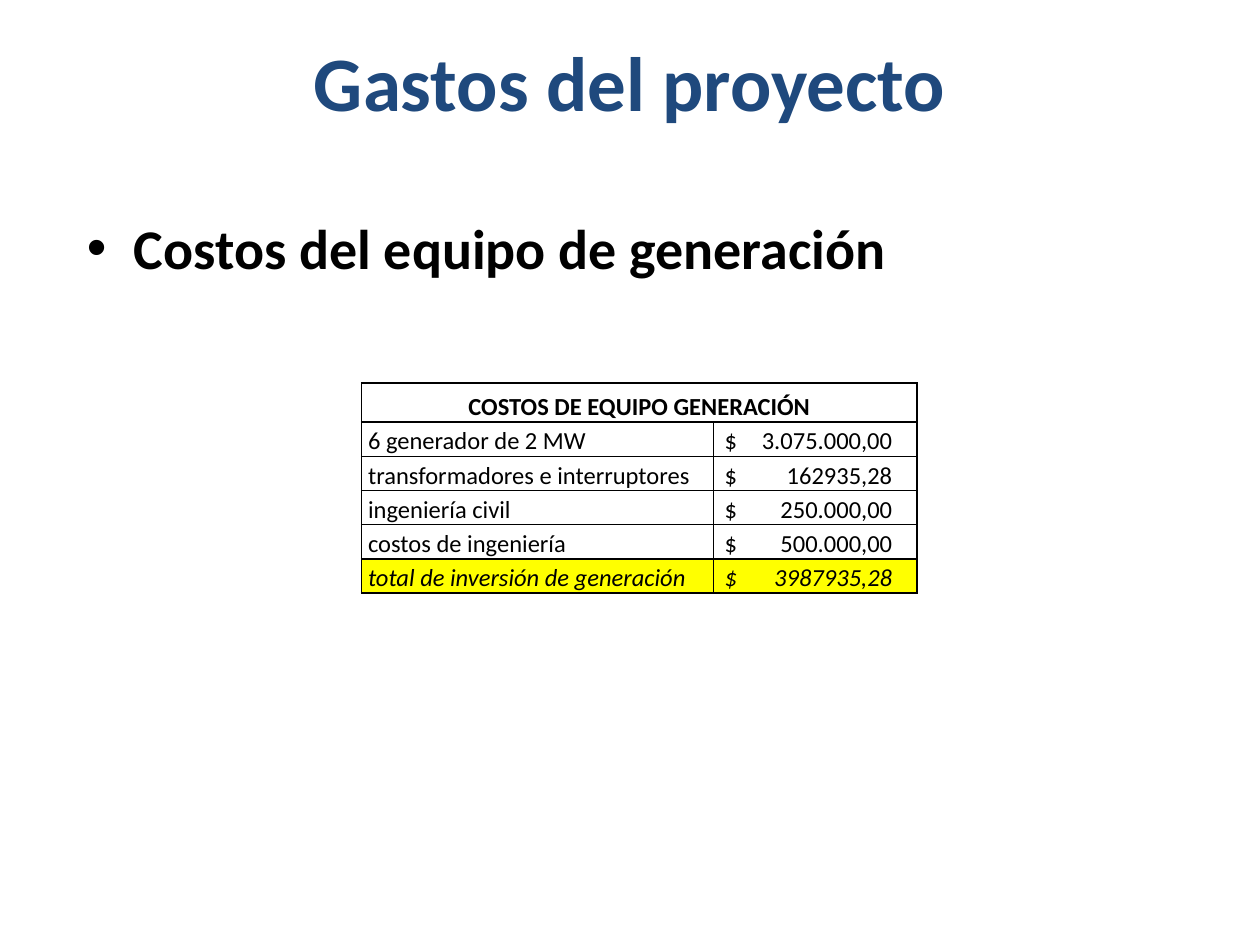
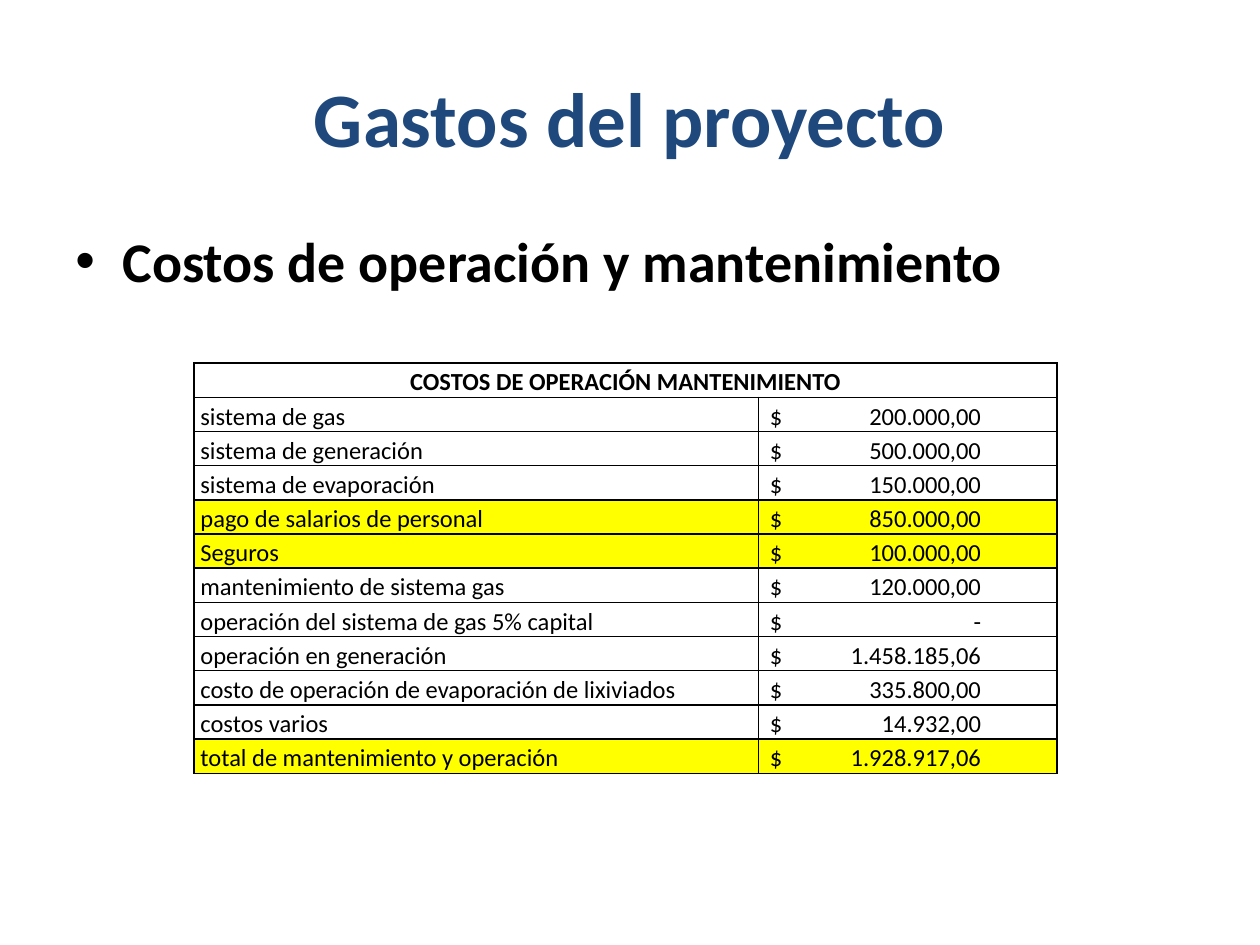
import pptx
import pptx.util
import pptx.dml.color
import pptx.enum.text
import pptx.oxml
import pptx.oxml.ns

Cm, Pt = pptx.util.Cm, pptx.util.Pt
ALIGN = pptx.enum.text.PP_ALIGN
ANCHOR = pptx.enum.text.MSO_ANCHOR

HUES = {"title": "1F497D", "text": "000000", "plain": "FFFFFF", "mark": "FFFF00"}
FONTS = {
    "title": {"name": "Calibri", "size": Pt(44), "bold": True},
    "topic": {"name": "Calibri", "size": Pt(32), "bold": True},
    "head": {"name": "Calibri", "size": Pt(14), "bold": True},
    "cell": {"name": "Calibri", "size": Pt(14), "bold": False},
    "total": {"name": "Calibri", "size": Pt(14), "bold": False, "italic": True},
}
CELL = {
    "margin_left": Cm(0.13), "margin_right": Cm(0.13),
    "margin_top": 0, "margin_bottom": 0,
    "vertical_anchor": ANCHOR.BOTTOM,
}
ROW = 0.69  # row height in cm

# Each cost: label, amount, and the look of its row
PLANT = [
    ("6 generador de 2 MW", "3.075.000,00", ""),
    ("transformadores e interruptores", "162935,28", ""),
    ("ingeniería civil", "250.000,00", ""),
    ("costos de ingeniería", "500.000,00", ""),
    ("total de inversión de generación", "3987935,28", "total"),
]
UPKEEP = [
    ("sistema de gas", "200.000,00", ""),
    ("sistema de generación", "500.000,00", ""),
    ("sistema de evaporación", "150.000,00", ""),
    ("pago de salarios de personal", "850.000,00", "mark"),
    ("Seguros", "100.000,00", "mark"),
    ("mantenimiento de sistema gas", "120.000,00", ""),
    ("operación del sistema de gas 5% capital", "-", ""),
    ("operación en generación", "1.458.185,06", ""),
    ("costo de operación de evaporación de lixiviados", "335.800,00", ""),
    ("costos varios", "14.932,00", ""),
    ("total de mantenimiento y operación", "1.928.917,06", "mark"),
]


def assign(item, values):
    for key, value in values.items():
        setattr(item, key, value)


def color(key):
    return pptx.dml.color.RGBColor.from_string(HUES[key])


def node(xml):
    space = pptx.oxml.ns.nsdecls("a")
    return pptx.oxml.parse_xml(xml.replace(" ", f" {space} ", 1))


def write(frame, text, font, hue="text", **layout):
    para = frame.paragraphs[0]
    assign(para, layout)
    run = para.add_run()
    run.text = text
    assign(run.font, FONTS[font])
    run.font.color.rgb = color(hue)
    return para


def textbox(slide, box):
    frame = slide.shapes.add_textbox(*map(Cm, box)).text_frame
    frame.word_wrap = True
    return frame


# Centred slide title
def add_title(slide, box):
    frame = textbox(slide, box)
    frame.vertical_anchor = ANCHOR.MIDDLE
    write(frame, "Gastos del proyecto", "title", "title", alignment=ALIGN.CENTER)


# Bulleted topic line
def add_topic(slide, box, text):
    para = write(textbox(slide, box), text, "topic", space_before=Pt(6.4))
    props = para._p.get_or_add_pPr()
    props.set("marL", str(Cm(0.95)))
    props.set("indent", str(-Cm(0.95)))
    props.append(node('<a:buFont typeface="Arial"/>'))
    props.append(node('<a:buChar char="•"/>'))


# Table cell with thin borders and a fill
def style(cell, fill):
    assign(cell, CELL)
    props = cell._tc.get_or_add_tcPr()
    for side in "LRTB":
        props.append(node(
            f'<a:ln{side} w="{Pt(1)}"><a:solidFill><a:srgbClr val="{HUES["text"]}"/>'
            f'</a:solidFill></a:ln{side}>'))
    cell.fill.solid()
    cell.fill.fore_color.rgb = color(fill)


# Cost table; amounts line up on a right tab stop
def add_costs(slide, box, head, costs, widths, top, stop):
    left, upper = box
    high = top + ROW * len(costs)
    shape = slide.shapes.add_table(
        len(costs) + 1, 2, Cm(left), Cm(upper), Cm(sum(widths)), Cm(high))
    table = shape.table
    assign(table, {"first_row": False, "horz_banding": False})
    for column, width in zip(table.columns, widths):
        column.width = Cm(width)
    for index, row in enumerate(table.rows):
        row.height = Cm(ROW if index else top)

    table.cell(0, 0).merge(table.cell(0, 1))
    for column in range(2):
        style(table.cell(0, column), "plain")
    write(table.cell(0, 0).text_frame, head, "head",
          alignment=ALIGN.CENTER, line_spacing=1.15)

    for index, (label, amount, look) in enumerate(costs, 1):
        font = "total" if look == "total" else "cell"
        for column, text in enumerate((label, f"$\t{amount}")):
            cell = table.cell(index, column)
            style(cell, "mark" if look else "plain")
            para = write(cell.text_frame, text, font, line_spacing=1.15)
        props = para._p.get_or_add_pPr()
        props.set("marL", str(Cm(0.1)))
        props.append(node(
            f'<a:tabLst ><a:tab pos="{Cm(stop)}" algn="r"/></a:tabLst>'))


def main():
    deck = pptx.Presentation()
    deck.slide_width, deck.slide_height = Cm(25.4), Cm(19.05)
    blank = deck.slide_layouts[6]

    # Generation equipment
    slide = deck.slides.add_slide(blank)
    add_topic(slide, (1.5, 4.17, 22.2, 1.78), "Costos del equipo de generación")
    add_title(slide, (1.27, 0.76, 22.86, 1.75))
    add_costs(slide, (7.29, 7.72), "COSTOS DE EQUIPO GENERACIÓN", PLANT,
              (7.09, 4.11), 0.79, 3.38)

    # Operation and upkeep
    slide = deck.slides.add_slide(blank)
    add_topic(slide, (1.27, 4.45, 22.86, 12.57), "Costos de operación y mantenimiento")
    add_title(slide, (1.27, 0.76, 22.86, 3.18))
    add_costs(slide, (3.91, 7.32), "COSTOS DE OPERACIÓN MANTENIMIENTO", UPKEEP,
              (11.38, 6.02), ROW, 4.26)

    deck.save("out.pptx")


if __name__ == "__main__":
    main()
